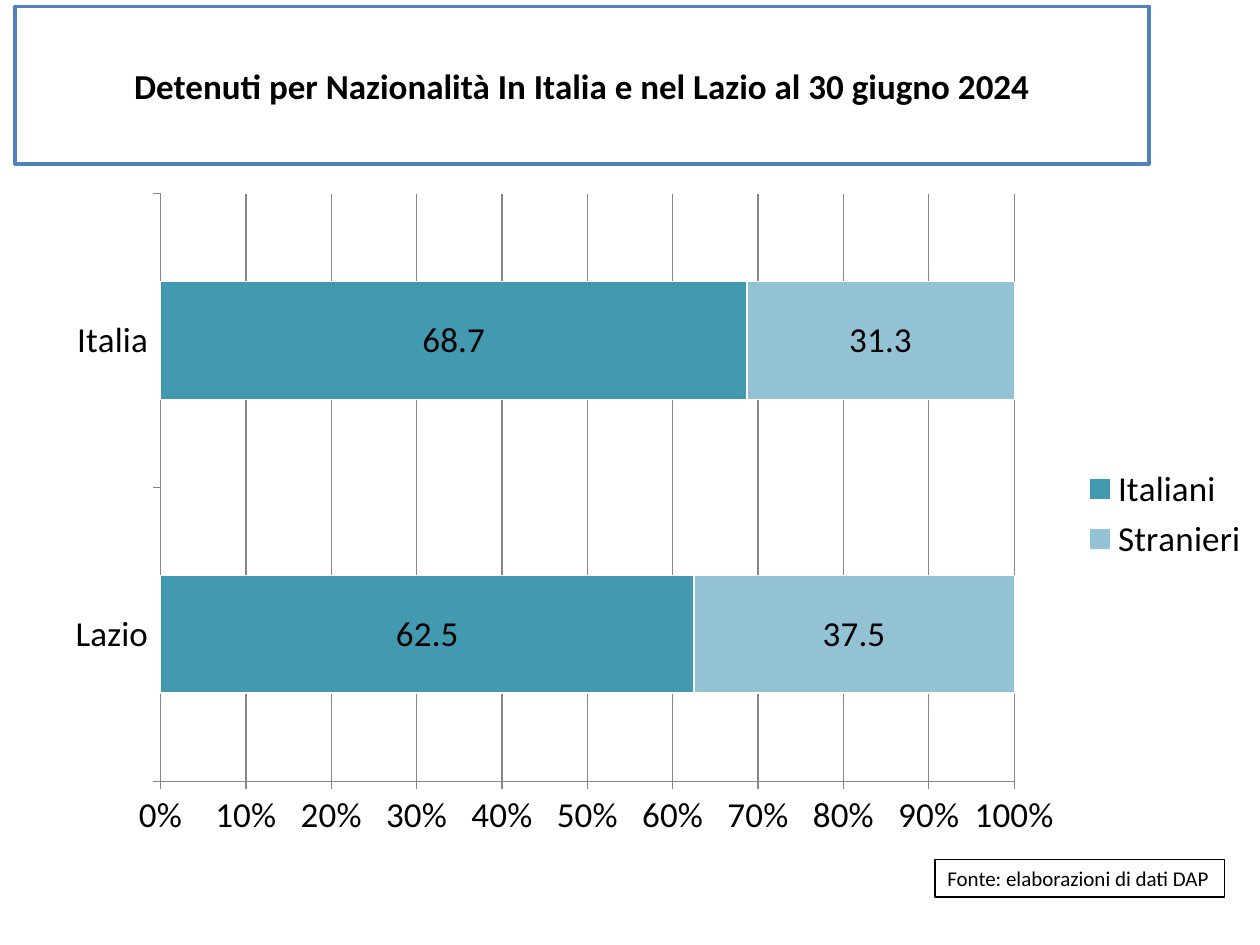
import pptx
import pptx.util
import pptx.dml.color
import pptx.chart.data
import pptx.enum.chart
import pptx.enum.shapes
import pptx.enum.text
import pptx.oxml

# Content
TITLE = "Detenuti per Nazionalità In Italia e nel Lazio al 30 giugno 2024"
SOURCE = "Fonte: elaborazioni di dati DAP"
AREAS = ["Lazio", "Italia"]
GROUPS = {"Italiani": [62.5, 68.7], "Stranieri": [37.5, 31.3]}

THEME = {
    "font": "Calibri", "big": 20, "small": 12,
    "ink": "000000", "paper": "FFFFFF", "frame": "4F81BD", "axis": "868686",
    "bars": ["4299B0", "93C2D4"],
}

# Places as shares of the slide: left, top, width, height
WIDE, HIGH = 10, 7.5
HEAD = (0.012, 0.0067, 0.9, 0.1667)
NOTE = (0.742, 0.9093, 0.23, 0.04)
CHART = (0.041, 0.1907, 0.961, 0.7067)
# Plot as shares of the chart
PLOT = {"x": 0.09, "y": 0.02, "w": 0.705, "h": 0.88}


def place(box):
    sides = (WIDE, HIGH, WIDE, HIGH)
    return [pptx.util.Inches(part * side) for part, side in zip(box, sides)]


def tint(name):
    return pptx.dml.color.RGBColor.from_string(name)


def style(font, size, bold=False):
    font.name = THEME["font"]
    font.size = pptx.util.Pt(size)
    font.bold = bold
    font.color.rgb = tint(THEME["ink"])


def write(slide, text, box, size, edge, width, bold=False, align="LEFT",
          anchor="TOP", wrap=True):
    shape = slide.shapes.add_shape(
        pptx.enum.shapes.MSO_SHAPE.RECTANGLE, *place(box))
    shape.shadow.inherit = False
    shape.fill.solid()
    shape.fill.fore_color.rgb = tint(THEME["paper"])
    shape.line.color.rgb = tint(edge)
    shape.line.width = pptx.util.Pt(width)
    frame = shape.text_frame
    frame.word_wrap = wrap
    frame.vertical_anchor = pptx.enum.text.MSO_ANCHOR[anchor]
    line = frame.paragraphs[0]
    line.alignment = pptx.enum.text.PP_ALIGN[align]
    run = line.add_run()
    run.text = text
    style(run.font, size, bold)
    return shape


def fix_plot(chart):
    area = chart._chartSpace.chart.plotArea
    for old in area.findall("{*}layout"):
        area.remove(old)
    modes = "".join(f'<c:{k}Mode val="edge"/>' for k in "xy")
    sizes = "".join(f'<c:{k} val="{v}"/>' for k, v in PLOT.items())
    area.insert(0, pptx.oxml.parse_xml(
        '<c:layout xmlns:c="http://schemas.openxmlformats.org/'
        'drawingml/2006/chart"><c:manualLayout>'
        f'<c:layoutTarget val="inner"/>{modes}{sizes}'
        '</c:manualLayout></c:layout>'))


def draw_chart(slide):
    data = pptx.chart.data.CategoryChartData(number_format="0.0")
    data.categories = AREAS
    for name, vals in GROUPS.items():
        data.add_series(name, vals)
    kinds = pptx.enum.chart
    chart = slide.shapes.add_chart(
        kinds.XL_CHART_TYPE.BAR_STACKED_100, *place(CHART), data).chart
    style(chart.font, THEME["big"])
    chart.has_title = False
    chart.has_legend = True
    chart.legend.position = kinds.XL_LEGEND_POSITION.RIGHT
    chart.legend.include_in_layout = False
    fix_plot(chart)

    # Axes and grid
    rows, scale = chart.category_axis, chart.value_axis
    scale.has_major_gridlines = True
    scale.major_unit = 0.1
    scale.maximum_scale = 1
    scale.minimum_scale = 0
    scale.tick_labels.number_format = "0%"
    scale.tick_labels.number_format_is_linked = False
    for axis in (rows, scale):
        axis.major_tick_mark = kinds.XL_TICK_MARK.OUTSIDE
        axis.minor_tick_mark = kinds.XL_TICK_MARK.NONE
    for part in (rows, scale, scale.major_gridlines):
        part.format.line.color.rgb = tint(THEME["axis"])
        part.format.line.width = pptx.util.Pt(0.75)

    # Bars and their values
    plot = chart.plots[0]
    plot.gap_width, plot.overlap = 150, 100
    plot.vary_by_categories = False
    for bar, shade in zip(plot.series, THEME["bars"]):
        bar.format.fill.solid()
        bar.format.fill.fore_color.rgb = tint(shade)
        bar.format.line.color.rgb = tint(THEME["paper"])
        bar.format.line.width = pptx.util.Pt(0.75)
        tags = bar.data_labels
        tags.show_value = True
        tags.position = kinds.XL_LABEL_POSITION.CENTER
        tags.number_format = "0.0"
        tags.number_format_is_linked = False
        style(tags.font, THEME["big"])


def main():
    deck = pptx.Presentation()
    deck.slide_width = pptx.util.Inches(WIDE)
    deck.slide_height = pptx.util.Inches(HIGH)
    slide = deck.slides.add_slide(deck.slide_layouts[6])
    write(slide, TITLE, HEAD, THEME["big"], THEME["frame"], 2,
          bold=True, align="CENTER", anchor="MIDDLE")
    write(slide, SOURCE, NOTE, THEME["small"], THEME["ink"], 0.75, wrap=False)
    draw_chart(slide)
    deck.save("out.pptx")


if __name__ == "__main__":
    main()
